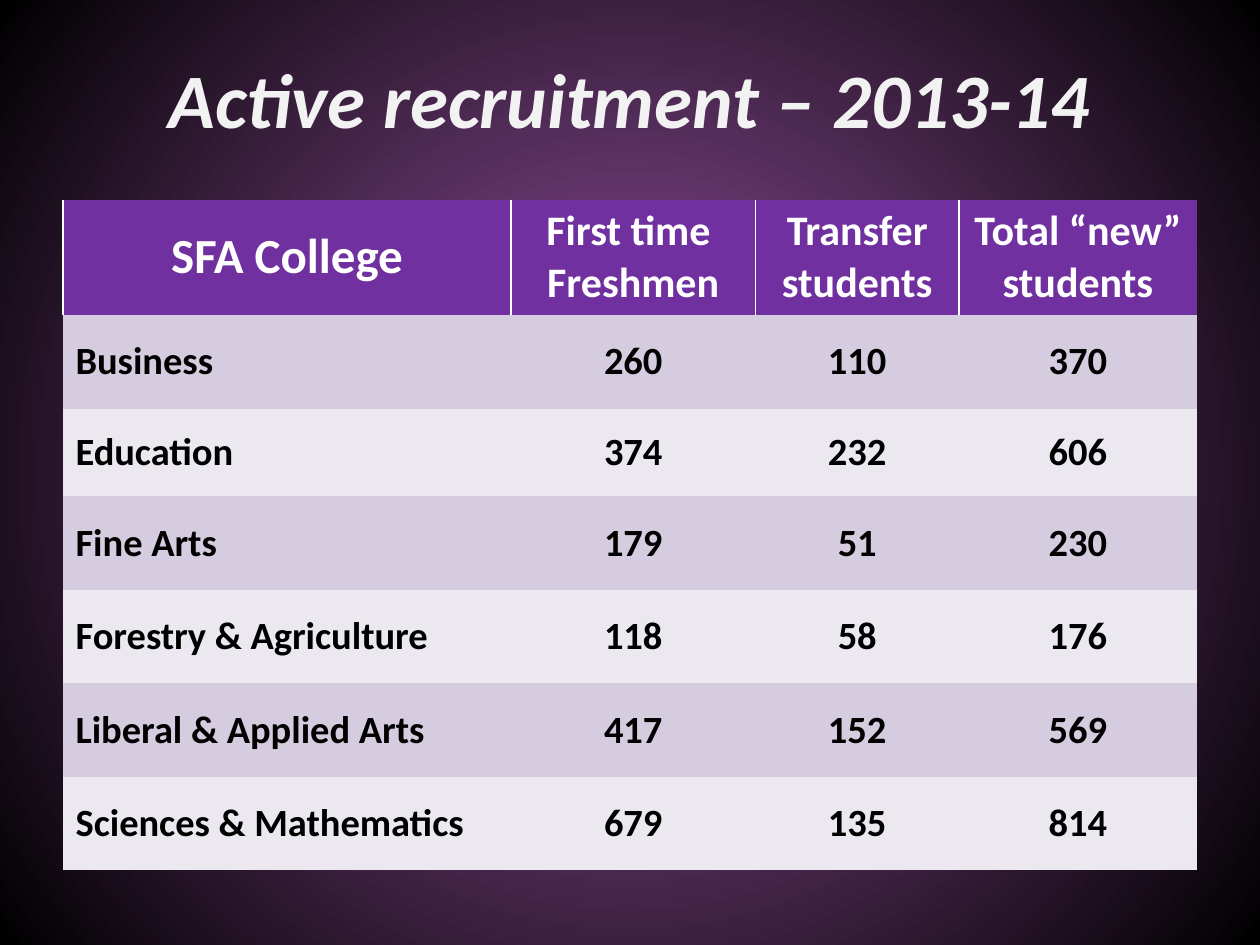
from pptx import Presentation
from pptx.dml.color import RGBColor
from pptx.enum.text import MSO_ANCHOR, PP_ALIGN
from pptx.oxml import parse_xml
from pptx.oxml.ns import nsdecls
from pptx.util import Pt

FONT = "Calibri"
COLORS = {
    "glow": "9651A1",
    "edge": "000000",
    "title": "F2F2F2",
    "header": "7030A0",
    "header_text": "FFFFFF",
    "divider": "FFFFFF",
    "odd_row": "D5CDDF",
    "even_row": "EBE8F0",
    "body_text": "000000",
}
NO_STYLE = "{2D5ABB26-0587-4C30-8999-92F81FD0307C}"
COLUMN_WIDTHS = [256, 139.7, 116.3, 136]
ROW_HEIGHTS = [66, 53.5, 50, 53.5, 53.5, 53.5, 53.5]
HEADERS = [
    (["SFA College"], 28),
    (["First time ", "Freshmen"], 24),
    (["Transfer students"], 24),
    (["Total “new” students"], 24),
]
COLLEGES = [
    ("Business", 260, 110, 370),
    ("Education", 374, 232, 606),
    ("Fine Arts", 179, 51, 230),
    ("Forestry & Agriculture", 118, 58, 176),
    ("Liberal & Applied Arts", 417, 152, 569),
    ("Sciences & Mathematics", 679, 135, 814),
]


def color(name):
    return RGBColor.from_string(COLORS[name])


def set_background(page):
    """Radial gradient, bright in the middle and dark at the corners."""
    background = parse_xml(
        f'<p:bg {nsdecls("p", "a")}><p:bgPr><a:gradFill rotWithShape="1"><a:gsLst>'
        f'<a:gs pos="0"><a:srgbClr val="{COLORS["glow"]}"/></a:gs>'
        f'<a:gs pos="100000"><a:srgbClr val="{COLORS["edge"]}"/></a:gs></a:gsLst>'
        '<a:path path="circle">'
        '<a:fillToRect l="50000" t="50000" r="50000" b="50000"/></a:path>'
        "</a:gradFill><a:effectLst/></p:bgPr></p:bg>"
    )
    page.element.cSld.insert(0, background)


def write_lines(frame, lines, size, color_name, align, italic=False):
    for index, line in enumerate(lines):
        para = frame.add_paragraph() if index else frame.paragraphs[0]
        para.alignment = align
        span = para.add_run()
        span.text = line
        span.font.name = FONT
        span.font.size = Pt(size)
        span.font.bold = True
        span.font.italic = italic
        span.font.color.rgb = color(color_name)


def add_title(page, text):
    box = page.shapes.add_textbox(Pt(36), Pt(21.6), Pt(648), Pt(68.4))
    frame = box.text_frame
    frame.word_wrap = True
    frame.vertical_anchor = MSO_ANCHOR.MIDDLE
    write_lines(frame, [text], 44, "title", PP_ALIGN.CENTER, italic=True)


def fill_cell(cell, lines, size, text_color, fill_color, align=PP_ALIGN.CENTER):
    cell.vertical_anchor = MSO_ANCHOR.MIDDLE
    cell.fill.solid()
    cell.fill.fore_color.rgb = color(fill_color)
    write_lines(cell.text_frame, lines, size, text_color, align)


def add_dividers(cell, sides):
    """Draw cell borders; they must come before the fill in the XML."""
    properties = cell._tc.get_or_add_tcPr()
    for index, side in enumerate(sides):
        properties.insert(index, parse_xml(
            f'<a:{side} {nsdecls("a")} w="{Pt(1)}"><a:solidFill>'
            f'<a:srgbClr val="{COLORS["divider"]}"/></a:solidFill></a:{side}>'
        ))


def add_recruitment_table(page):
    frame = page.shapes.add_table(
        len(ROW_HEIGHTS), len(COLUMN_WIDTHS), Pt(36), Pt(114),
        Pt(sum(COLUMN_WIDTHS)), Pt(sum(ROW_HEIGHTS)),
    )
    table = frame.table
    table._tbl.tblPr.find("{*}tableStyleId").text = NO_STYLE
    for column, width in zip(table.columns, COLUMN_WIDTHS):
        column.width = Pt(width)
    for row, height in zip(table.rows, ROW_HEIGHTS):
        row.height = Pt(height)

    last = len(HEADERS) - 1
    for index, (lines, size) in enumerate(HEADERS):
        cell = table.cell(0, index)
        fill_cell(cell, lines, size, "header_text", "header")
        add_dividers(cell, ["lnL", "lnR"] if index < last else ["lnL"])

    for row_index, college in enumerate(COLLEGES, start=1):
        band = "odd_row" if row_index % 2 else "even_row"
        for index, value in enumerate(college):
            align = PP_ALIGN.CENTER if index else PP_ALIGN.LEFT
            fill_cell(table.cell(row_index, index), [str(value)], 22,
                      "body_text", band, align)


def main():
    deck = Presentation()
    deck.slide_width, deck.slide_height = Pt(720), Pt(540)
    page = deck.slides.add_slide(deck.slide_layouts[6])
    set_background(page)
    add_title(page, "Active recruitment – 2013-14")
    add_recruitment_table(page)
    deck.save("out.pptx")


if __name__ == "__main__":
    main()
